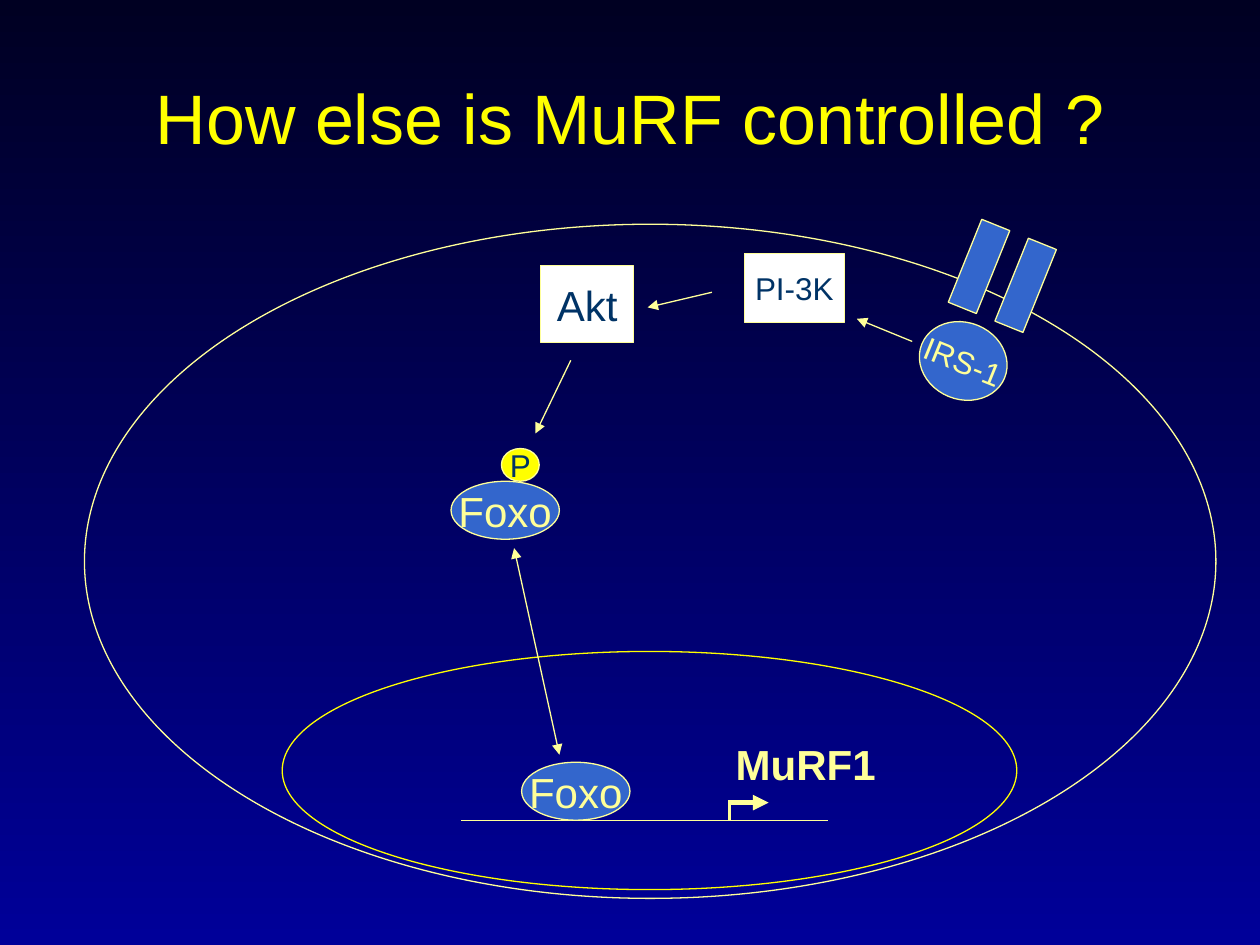
from dataclasses import dataclass

from lxml.etree import SubElement
from pptx import Presentation
from pptx.dml.color import RGBColor
from pptx.enum.shapes import MSO_CONNECTOR, MSO_SHAPE
from pptx.enum.text import MSO_ANCHOR, PP_ALIGN
from pptx.oxml.ns import qn
from pptx.util import Inches, Pt


@dataclass(frozen=True)
class Theme:
    font: str = "Arial"
    top: str = "000022"
    base: str = "000099"
    title: str = "FFFF00"
    pale: str = "FFFF99"
    blue: str = "3366CC"
    white: str = "FFFFFF"
    navy: str = "003366"
    head: int = 40
    large: int = 24
    small: int = 18
    thin: float = 0.75
    mid: float = 1.5
    thick: float = 3


THEME = Theme()
OVAL, RECT = MSO_SHAPE.OVAL, MSO_SHAPE.RECTANGLE


def rgb(code):
    return RGBColor.from_string(code)


def write(shape, text, size, color, align=PP_ALIGN.CENTER, bold=False, wrap=False):
    frame = shape.text_frame
    frame.text = text
    frame.word_wrap = wrap
    frame.vertical_anchor = MSO_ANCHOR.MIDDLE
    para = frame.paragraphs[0]
    para.alignment = align
    font = para.runs[0].font
    font.name, font.size, font.bold = THEME.font, Pt(size), bold
    font.color.rgb = rgb(color)


def label(slide, box, text, size, color, **style):
    area = slide.shapes.add_textbox(*map(Inches, box))
    write(area, text, size, color, **style)


def draw(slide, kind, box, fill=None, line=THEME.pale, turn=0):
    shape = slide.shapes.add_shape(kind, *map(Inches, box))
    shape.shadow.inherit = False
    shape.rotation = turn
    if fill:
        shape.fill.solid()
        shape.fill.fore_color.rgb = rgb(fill)
    else:
        shape.fill.background()
    shape.line.color.rgb = rgb(line)
    shape.line.width = Pt(THEME.thin)
    return shape


def link(slide, start, end, width=THEME.thin, ends=()):
    """Draw a straight line; ends names the arrowheads, headEnd before tailEnd."""
    line = slide.shapes.add_connector(
        MSO_CONNECTOR.STRAIGHT, *map(Inches, (*start, *end)))
    line.line.color.rgb = rgb(THEME.pale)
    line.line.width = Pt(width)
    stroke = line.line._get_or_add_ln()
    for tag in ends:
        SubElement(stroke, qn(f"a:{tag}"), type="triangle")
    SubElement(line._element.spPr, qn("a:effectLst"))


def arrow(slide, start, end, width=THEME.thin):
    link(slide, start, end, width, ["tailEnd"])


def foxo(slide, x, y):
    shape = draw(slide, OVAL, (x, y, 0.86, 0.46), THEME.blue)
    write(shape, "Foxo", THEME.large, THEME.pale)


def nucleus(slide, box):
    """Nucleus with the MuRF1 gene, its start arrow and bound Foxo."""
    x, y = box[:2]
    draw(slide, OVAL, box, line=THEME.title)
    gene, start = y + 1.34, x + 3.55
    link(slide, (x + 1.42, gene), (x + 4.33, gene))
    link(slide, (start, gene), (start, gene - 0.16), THEME.mid)
    arrow(slide, (start, gene - 0.14), (start + 0.31, gene - 0.14), THEME.thick)
    label(slide, (x + 3.5, y + 0.64, 1.31, 0.5), "MuRF1", THEME.large,
          THEME.pale, align=PP_ALIGN.LEFT, bold=True)
    foxo(slide, x + 1.9, gene - 0.46)


def kinase(slide, box, text, size):
    write(draw(slide, RECT, box, THEME.white), text, size, THEME.navy)


def cascade(slide, box):
    """Signal from PI-3K through Akt to phosphorylated Foxo and the nucleus."""
    x, y = box[:2]
    kinase(slide, (x + 2.33, y, 0.79, 0.55), "PI-3K", THEME.small)
    arrow(slide, (x + 2.07, y + 0.31), (x + 1.56, y + 0.43))
    kinase(slide, (x + 0.71, y + 0.1, 0.74, 0.61), "Akt", THEME.large)
    arrow(slide, (x + 0.95, y + 0.85), (x + 0.67, y + 1.43))
    foxo(slide, x, y + 1.81)
    tag = draw(slide, OVAL, (x + 0.4, y + 1.55, 0.3, 0.26), THEME.title)
    write(tag, "P", THEME.small, THEME.navy)
    link(slide, (x + 0.5, y + 2.34), (x + 0.86, y + 3.98),
         ends=["headEnd", "tailEnd"])


def receptor(slide, box, turn=22):
    """Two membrane bars with IRS-1 below, and its arrow to PI-3K."""
    x, y = box[:2]
    for dx, dy in ((0.85, 0), (1.22, 0.15)):
        draw(slide, RECT, (x + dx, y + dy, 0.24, 0.71), THEME.blue, turn=turn)
    irs = draw(slide, OVAL, (x + 0.49, y + 0.8, 0.71, 0.61), THEME.blue, turn=turn)
    write(irs, "IRS-1", THEME.small, THEME.pale)
    arrow(slide, (x + 0.44, y + 0.95), (x, y + 0.77))


def backdrop(slide):
    fill = slide.background.fill
    fill.gradient()
    fill.gradient_angle = 270
    for stop, color in zip(fill.gradient_stops, (THEME.top, THEME.base)):
        stop.color.rgb = rgb(color)


def main():
    deck = Presentation()
    deck.slide_width, deck.slide_height = Inches(10), Inches(7.5)
    slide = deck.slides.add_slide(deck.slide_layouts[6])
    backdrop(slide)
    label(slide, (0.5, 0.3, 9, 1.25), "How else is MuRF controlled ?",
          THEME.head, THEME.title, wrap=True)
    draw(slide, OVAL, (0.67, 1.78, 8.98, 5.35))
    nucleus(slide, (2.24, 5.17, 5.83, 1.89))
    cascade(slide, (3.58, 2.01, 3.12, 3.98))
    receptor(slide, (6.8, 1.76, 1.46, 1.41))
    deck.save("out.pptx")


if __name__ == "__main__":
    main()
